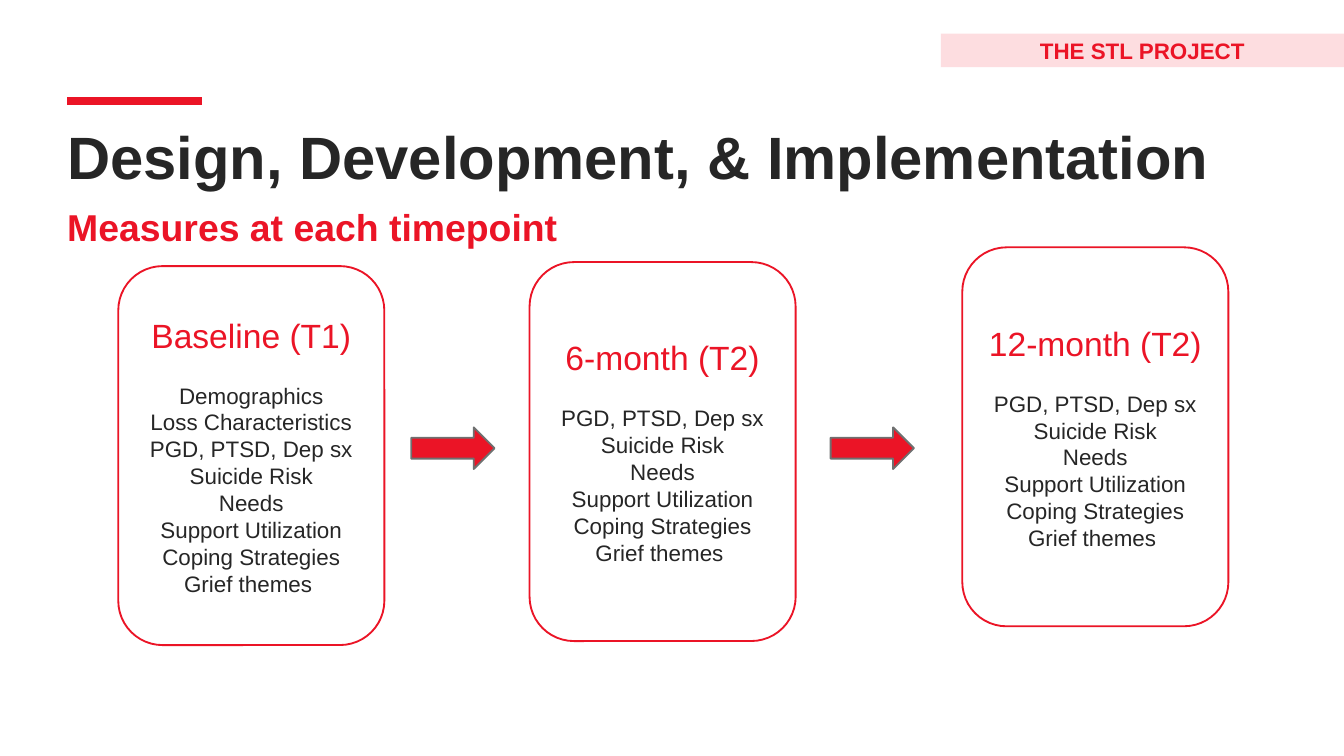
"""Build the slide on measures taken at each timepoint."""
import pptx
import pptx.dml.color
import pptx.enum.shapes
import pptx.enum.text
import pptx.oxml
import pptx.util
from lxml import etree

Pt, Inches = pptx.util.Pt, pptx.util.Inches
RGB = pptx.dml.color.RGBColor
Align, Anchor = pptx.enum.text.PP_ALIGN, pptx.enum.text.MSO_ANCHOR
Kind = pptx.enum.shapes.MSO_SHAPE

RED = RGB(0xEB, 0x14, 0x26)
PINK = RGB(0xFD, 0xDD, 0xE0)
DARK = RGB(0x26, 0x26, 0x26)
GRAY = RGB(0x6F, 0x70, 0x70)
FONT = "Arial"
WIDE = 10
EDGE = 0.05 * WIDE

HEADS = [
    ("Design, Development, & Implementation", (EDGE, 0.87, 9, 0.56),
     32, DARK, Align.LEFT, Anchor.TOP, 40, 0),
    ("Measures at each timepoint", (EDGE, 1.45, 9, 3.05),
     20, RED, Align.LEFT, Anchor.TOP, 29, 9),
    ("THE STL PROJECT", (0.7 * WIDE, 0.25, 0.3 * WIDE, 0.25),
     12, RED, Align.CENTER, Anchor.MIDDLE, None, 0),
]
INTRO = ["Demographics", "Loss Characteristics"]
CORE = ["PGD, PTSD, Dep sx", "Suicide Risk", "Needs",
        "Support Utilization", "Coping Strategies", "Grief themes "]
CARDS = [
    ("Baseline (T1)", INTRO + CORE, 0.88, 1.98),
    ("6-month (T2)", CORE, 3.94, 1.95),
    ("12-month (T2)", CORE, 7.16, 1.84),
]
CARD = (1.98, 2.82)
ARROWS = [3.06, 6.18]
ARROW = (0.62, 0.31)
MID = 3.18


def place(shape, box):
    shape.left, shape.top, shape.width, shape.height = map(Inches, box)


def style(para, size, color, bold=False):
    for run in para.runs:
        font = run.font
        font.name, font.size, font.bold = FONT, Pt(size), bold
        font.color.rgb = color


def head(shape, text, box, size, color, align, anchor, line, after):
    place(shape, box)
    frame = shape.text_frame
    frame.text = text
    frame.word_wrap = True
    frame.auto_size = pptx.enum.text.MSO_AUTO_SIZE.NONE
    frame.vertical_anchor = anchor
    frame.margin_left = frame.margin_right = 0
    frame.margin_top = frame.margin_bottom = 0
    para = frame.paragraphs[0]
    props = para._p.get_or_add_pPr()
    props.set("marL", "0")
    props.set("indent", "0")
    etree.SubElement(props, pptx.oxml.ns.qn("a:buNone"))
    para.alignment = align
    para.space_before, para.space_after = Pt(0), Pt(after)
    if line:
        para.line_spacing = Pt(line)
    style(para, size, color, True)


def draw(shapes, kind, box, fill, edge):
    shape = shapes.add_shape(kind, *map(Inches, box))
    shape.shadow.inherit = False
    if fill is None:
        shape.fill.background()
    else:
        shape.fill.solid()
        shape.fill.fore_color.rgb = fill
    shape.line.color.rgb = edge
    shape.line.width = Pt(1)
    return shape


def card(shapes, title, items, left, top):
    shape = draw(shapes, Kind.ROUNDED_RECTANGLE, (left, top, *CARD), None, RED)
    frame = shape.text_frame
    frame.word_wrap = True
    frame.vertical_anchor = Anchor.MIDDLE
    frame.margin_left = frame.margin_right = Inches(0.05)
    frame.text = "\n".join([title, *items])
    for row, para in enumerate(frame.paragraphs):
        size, color = (12, DARK) if row else (18, RED)
        para.alignment = Align.CENTER
        para.line_spacing = Pt(1.2 * size)
        para.space_before = Pt(14.4 if row == 1 else 0)
        style(para, size, color)


def main():
    deck = pptx.Presentation()
    deck.slide_width = Inches(WIDE)
    deck.slide_height = deck.slide_width * 9 // 16
    slide = deck.slides.add_slide(deck.slide_layouts[3])
    shapes = slide.shapes

    for holder, spec in zip(slide.placeholders, HEADS):
        head(holder, *spec)
    tag = slide.placeholders[2]
    tag.fill.solid()
    tag.fill.fore_color.rgb = PINK

    ends = map(Inches, (EDGE, 0.75, EDGE + 1, 0.75))
    rule = shapes.add_connector(pptx.enum.shapes.MSO_CONNECTOR.STRAIGHT, *ends)
    rule.line.color.rgb = RED
    rule.line.width = Pt(4)
    etree.SubElement(rule._element.spPr, pptx.oxml.ns.qn("a:effectLst"))

    for left in ARROWS:
        draw(shapes, Kind.RIGHT_ARROW, (left, MID, *ARROW), RED, GRAY)
    for data in CARDS:
        card(shapes, *data)
    deck.save("out.pptx")


if __name__ == "__main__":
    main()
